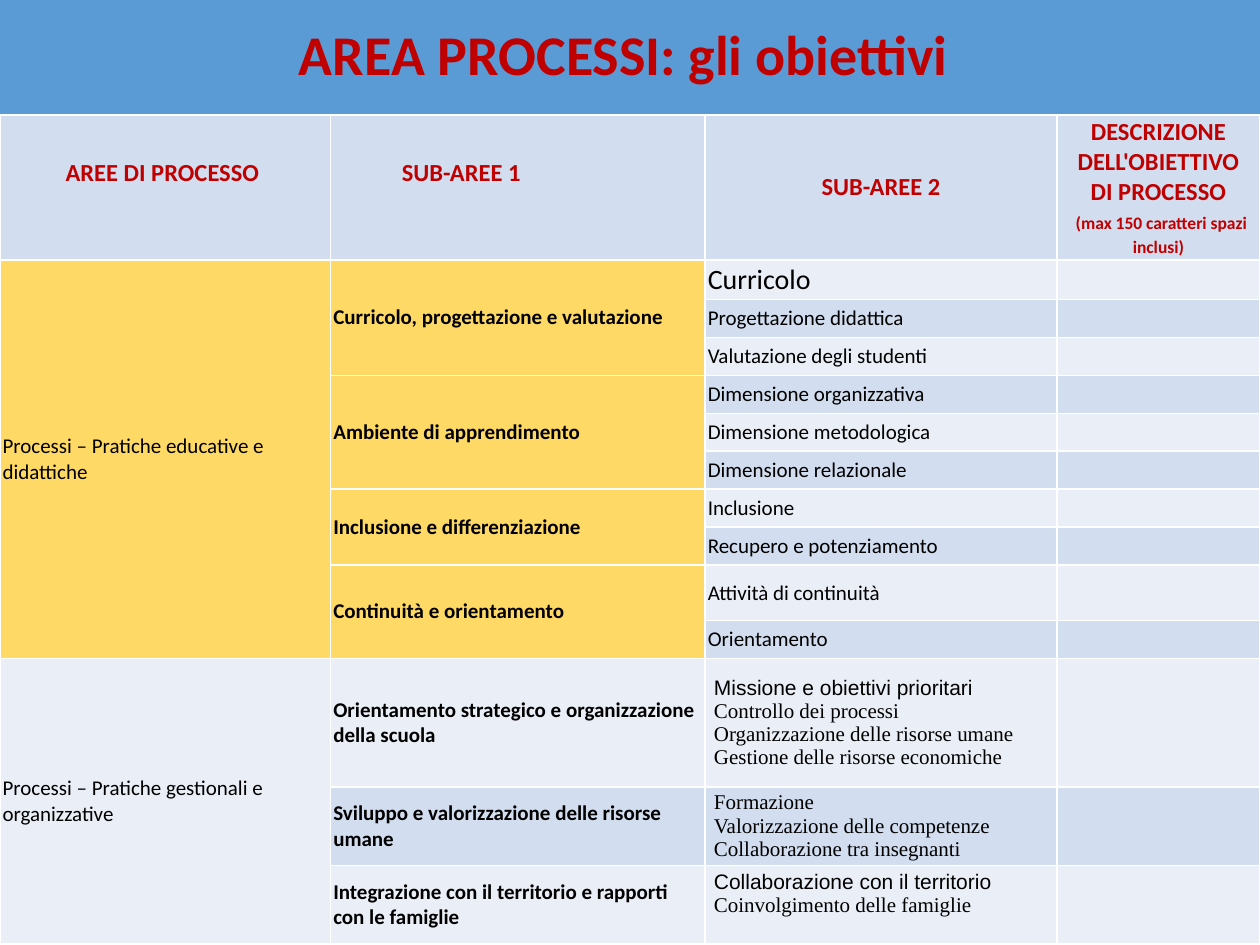
"""Build the slide on process areas and their objectives."""
import pptx
import pptx.util
import pptx.dml.color
import pptx.enum.text
import pptx.oxml
import pptx.oxml.ns

Pt = pptx.util.Pt
RGB = pptx.dml.color.RGBColor
ALIGN = pptx.enum.text.PP_ALIGN
MIDDLE = pptx.enum.text.MSO_ANCHOR.MIDDLE

SKY = RGB(0x5B, 0x9B, 0xD5)
RED = RGB(0xC0, 0x00, 0x00)
BLACK = RGB(0x00, 0x00, 0x00)
YELLOW = RGB(0xFF, 0xD9, 0x66)
BANDS = RGB(0xD2, 0xDE, 0xEF), RGB(0xEA, 0xEF, 0xF7)
SERIF = "Times New Roman"

TITLE = "AREA PROCESSI: gli obiettivi "
HEADINGS = [
    (["AREE DI PROCESSO"], dict(indent=36, bottom=16)),
    (["\N{NO-BREAK SPACE}SUB-AREE 1"], dict(indent=36, bottom=16)),
    (["SUB-AREE 2"], dict(align=ALIGN.CENTER)),
    (["DESCRIZIONE DELL'OBIETTIVO", "DI PROCESSO",
      [(" ", {}), ("(max 150 caratteri spazi inclusi)", dict(size=10))]],
     dict(align=ALIGN.CENTER)),
]
TEACHING = "Processi – Pratiche educative e didattiche", [
    ("Curricolo, progettazione e valutazione",
     ["Curricolo", "Progettazione didattica", "Valutazione degli studenti"]),
    ("Ambiente di apprendimento",
     ["Dimensione organizzativa", "Dimensione metodologica", "Dimensione relazionale"]),
    ("Inclusione e differenziazione", ["Inclusione", "Recupero e potenziamento"]),
    ("Continuità e orientamento", ["Attività di continuità", "Orientamento"]),
]
MANAGEMENT = "Processi – Pratiche gestionali e organizzative", [
    (["Orientamento strategico e organizzazione della scuola"],
     [[("Missione e obiettivi prioritari", dict(font="Arial"))],
      "Controllo dei processi", "Organizzazione delle risorse umane",
      "Gestione delle risorse economiche"], 0),
    (["Sviluppo e valorizzazione delle risorse", "umane"],
     ["Formazione", "Valorizzazione delle competenze", "Collaborazione tra insegnanti"], 0),
    (["Integrazione con il territorio e rapporti", "con le famiglie"],
     [[("Collaborazione con il territorio", dict(font="Arial"))],
      "Coinvolgimento delle famiglie"], 13),
]
COLUMN_WIDTHS = [189, 214, 201, 116]
ROW_HEIGHTS = [82.8, 22.6] + [21.7] * 7 + [31.8, 21.6, 73.4, 44.9, 44.9]
TABLE_TOP = 65.7


def write(frame, lines, *, size=12, font="Calibri", color=BLACK, bold=False,
          align=ALIGN.LEFT, indent=0, before=0, spacing=None, side=1.5, bottom=0):
    """Fill a text frame or cell; a line is a string or a list of (text, changes)."""
    frame.margin_left = frame.margin_right = Pt(side)
    frame.margin_top, frame.margin_bottom = 0, Pt(bottom)
    frame.vertical_anchor = MIDDLE
    body = getattr(frame, "text_frame", frame)
    body.word_wrap = True
    for number, line in enumerate(lines):
        paragraph = body.add_paragraph() if number else body.paragraphs[0]
        paragraph.alignment = align
        paragraph.space_before = Pt(before)
        paragraph.line_spacing = spacing
        if indent:
            paragraph._p.get_or_add_pPr().set("indent", str(Pt(indent)))
        for text, changes in [(line, {})] if isinstance(line, str) else line:
            run = paragraph.add_run()
            run.text = text
            run.font.size = Pt(changes.get("size", size))
            run.font.name = changes.get("font", font)
            run.font.bold = bold
            run.font.color.rgb = color


def prepare(cell, fill):
    """Give a cell its fill, white borders and a small empty line."""
    cell.margin_top = cell.margin_bottom = 0
    cell.fill.solid()
    cell.fill.fore_color.rgb = fill
    cell.text_frame.paragraphs[0]._p.get_or_add_endParaRPr().set("sz", "1200")
    properties = cell._tc.get_or_add_tcPr()
    for place, side in enumerate(("lnL", "lnR", "lnT", "lnB")):
        properties.insert(place, pptx.oxml.parse_xml(
            f'<a:{side} {pptx.oxml.ns.nsdecls("a")} w="12700"><a:solidFill>'
            f'<a:srgbClr val="FFFFFF"/></a:solidFill></a:{side}>'))


def merge(table, column, first, count):
    """Merge cells down a column and return the top one."""
    top = table.cell(first, column)
    top.merge(table.cell(first + count - 1, column))
    return top


def fill_table(table):
    """Write headings, areas, sub-areas and their items."""
    for column, (lines, layout) in enumerate(HEADINGS):
        write(table.cell(0, column), lines, size=14, color=RED, bold=True,
              before=4.4 if column == 2 else 0, **layout)

    row = 1
    area, groups = TEACHING
    write(merge(table, 0, row, sum(len(items) for _, items in groups)), [area])
    for sub_area, items in groups:
        write(merge(table, 1, row, len(items)), [sub_area], bold=True)
        for item in items:
            write(table.cell(row, 2), [item], size=16 if row == 1 else 12)
            row += 1

    area, groups = MANAGEMENT
    write(merge(table, 0, row, len(groups)), [area])
    for sub_area, items, bottom in groups:
        write(table.cell(row, 1), sub_area, bold=True)
        write(table.cell(row, 2), items, font=SERIF, side=5, bottom=bottom)
        row += 1


def main():
    deck = pptx.Presentation()
    deck.slide_width, deck.slide_height = Pt(720), Pt(540)
    slide = deck.slides.add_slide(deck.slide_layouts[6])
    slide.background.fill.solid()
    slide.background.fill.fore_color.rgb = SKY

    title = slide.shapes.add_textbox(0, 0, Pt(720), Pt(TABLE_TOP))
    write(title.text_frame, [TITLE], size=32, color=RED, bold=True,
          align=ALIGN.CENTER, spacing=0.9)

    table = slide.shapes.add_table(
        len(ROW_HEIGHTS), len(COLUMN_WIDTHS), 0, Pt(TABLE_TOP),
        Pt(sum(COLUMN_WIDTHS)), Pt(sum(ROW_HEIGHTS))).table
    table.first_row = table.horz_banding = False
    for column, width in zip(table.columns, COLUMN_WIDTHS):
        column.width = Pt(width)
    teaching_rows = sum(len(items) for _, items in TEACHING[1])
    for number, height in enumerate(ROW_HEIGHTS):
        table.rows[number].height = Pt(height)
        for column in range(len(COLUMN_WIDTHS)):
            yellow = column < 2 and 1 <= number <= teaching_rows
            prepare(table.cell(number, column), YELLOW if yellow else BANDS[number % 2])
    fill_table(table)
    deck.save("out.pptx")


if __name__ == "__main__":
    main()
